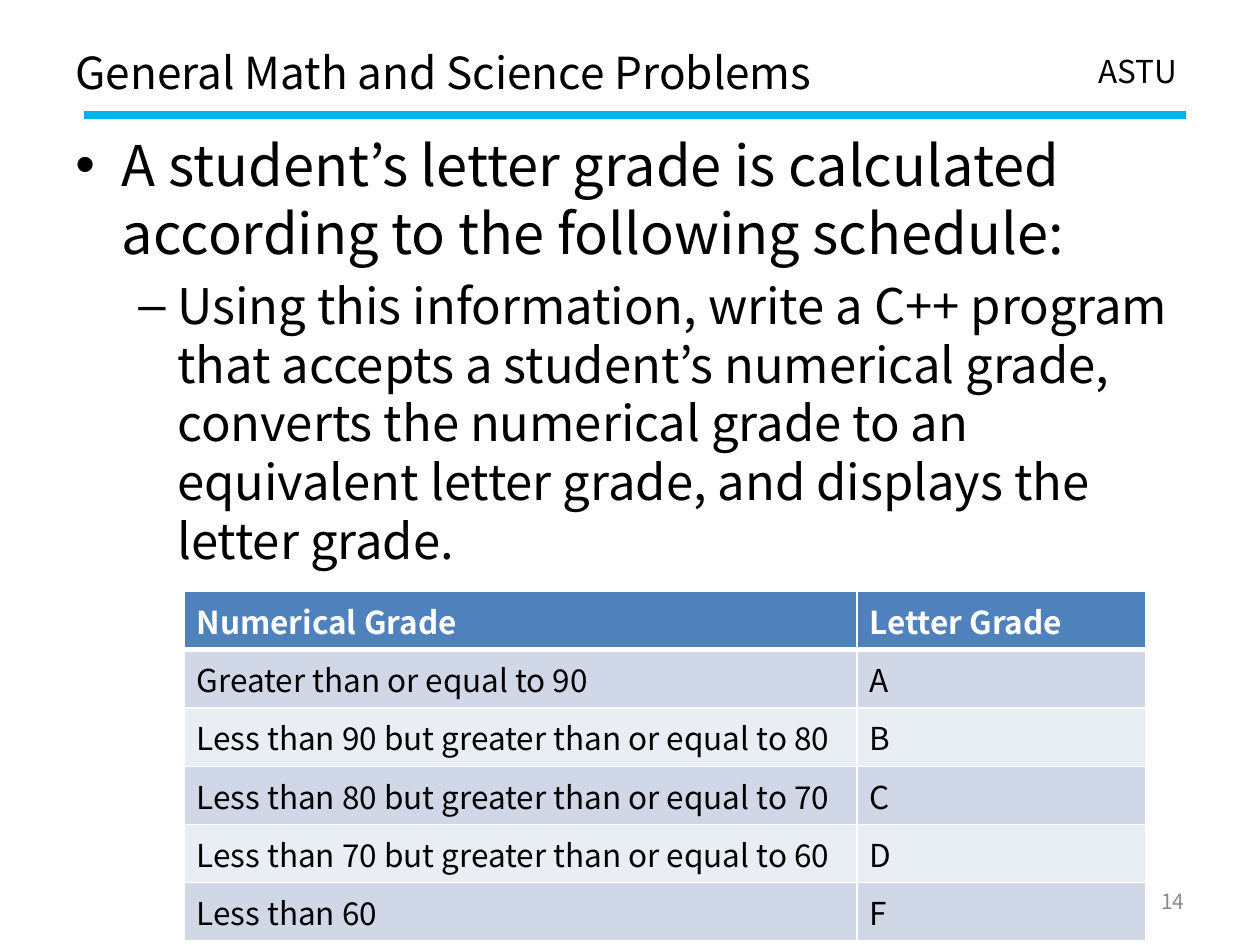
from dataclasses import dataclass
from lxml.etree import SubElement as Sub
from pptx import Presentation
from pptx.dml.color import RGBColor as Rgb
from pptx.enum.text import MSO_ANCHOR as Anchor, PP_ALIGN as Align
from pptx.oxml.ns import qn
from pptx.util import Emu, Inches, Pt


@dataclass(frozen=True)
class Theme:
    """Colours, type sizes and fonts of the slide."""
    font: str = "Noto Sans CJK KR"
    mark: str = "Arial"
    ink: str = "000000"
    white: str = "FFFFFF"
    rule: str = "00B0F0"
    grey: str = "8C8C8C"
    head: str = "4F81BD"
    bands: tuple = ("D0D8E8", "E9EDF4")
    title: float = 25.2
    lead: int = 32
    sub: int = 28
    text: int = 18
    note: int = 12


LOOK = Theme()
WIDE, HIGH = Inches(10), Inches(7.5)
GRADES = [
    ("Numerical Grade", "Letter Grade"),
    ("Greater than or equal to 90", "A"),
    ("Less than 90 but greater than or equal to 80", "B"),
    ("Less than 80 but greater than or equal to 70", "C"),
    ("Less than 70 but greater than or equal to 60", "D"),
    ("Less than 60", "F"),
]
POINTS = [
    ("•", 0, 0.37, 0.37, LOOK.lead,
     "A student’s letter grade is calculated according to the following schedule:"),
    ("–", 1, 0.81, 0.31, LOOK.sub,
     "Using this information, write a C++ program that accepts a student’s "
     "numerical grade, converts the numerical grade to an equivalent letter "
     "grade, and displays the letter grade."),
]


def place(x, y, w, h):
    """Turn shares of the slide's size into lengths."""
    return [Emu(round(n)) for n in (x * WIDE, y * HIGH, w * WIDE, h * HIGH)]


def write(par, text, size, tint=LOOK.ink, bold=False):
    """Add one styled run to a paragraph."""
    run = par.add_run()
    run.text = text
    font = run.font
    font.name, font.size, font.bold = LOOK.font, Pt(size), bold
    font.color.rgb = Rgb.from_string(tint)


def frame(slide, area, anchor=Anchor.TOP):
    """Add a wrapping text box and return its frame."""
    box = slide.shapes.add_textbox(*place(*area)).text_frame
    box.word_wrap, box.vertical_anchor = True, anchor
    return box


def label(slide, area, text, size, tint=LOOK.ink, align=Align.LEFT, anchor=Anchor.MIDDLE):
    """Add a single line of text."""
    par = frame(slide, area, anchor).paragraphs[0]
    par.alignment = align
    write(par, text, size, tint)


def rule(slide, left, right, y):
    """Draw the line under the title."""
    start, top, width, _ = place(left, y, right - left, 0)
    line = slide.shapes.add_connector(1, start, top, start + width, top)
    line.line.color.rgb, line.line.width = Rgb.from_string(LOOK.rule), Pt(4.5)
    Sub(line._element.spPr, qn("a:effectLst"))


def points(slide, area, items):
    """Add the bulleted text."""
    box = frame(slide, area)
    for i, (mark, level, left, hang, size, text) in enumerate(items):
        par = box.add_paragraph() if i else box.paragraphs[0]
        props = par._p.get_or_add_pPr()
        props.set("marL", str(Inches(left)))
        props.set("indent", str(-Inches(hang)))
        Sub(props, qn("a:buFont"), typeface=LOOK.mark)
        Sub(props, qn("a:buChar"), char=mark)
        par.level = level
        if i:
            par.space_before = Pt(0.2 * size)
        write(par, text, size)


def edge(cell, side, width):
    """Draw one white border of a cell."""
    line = Sub(cell._tc.get_or_add_tcPr(), qn("a:" + side), w=str(Pt(width)))
    Sub(Sub(line, qn("a:solidFill")), qn("a:srgbClr"), val=LOOK.white)


def grid(slide, area, rows, shares):
    """Add the banded table."""
    spot = place(*area)
    table = slide.shapes.add_table(len(rows), len(shares), *spot).table
    for col, share in zip(table.columns, shares):
        col.width = Emu(round(spot[2] * share))
    for r, row in enumerate(rows):
        fill = LOOK.bands[(r - 1) % 2] if r else LOOK.head
        for c, text in enumerate(row):
            cell = table.cell(r, c)
            for side in ("lnL", "lnR", "lnT", "lnB"):
                thick = (r, side) in ((0, "lnB"), (1, "lnT"))
                edge(cell, side, 3 if thick else 1)
            cell.fill.solid()
            cell.fill.fore_color.rgb = Rgb.from_string(fill)
            tint = LOOK.ink if r else LOOK.white
            write(cell.text_frame.paragraphs[0], text, LOOK.text, tint, not r)


def main():
    """Build and save the slide."""
    deck = Presentation()
    deck.slide_width, deck.slide_height = WIDE, HIGH
    slide = deck.slides.add_slide(deck.slide_layouts[6])
    rule(slide, 0.067, 0.941, 0.122)
    label(slide, (0.862, 0.049, 0.1, 0.053), "ASTU", LOOK.text, anchor=Anchor.TOP)
    label(slide, (0.05, 0.04, 0.8, 0.072), "General Math and Science Problems", LOOK.title)
    points(slide, (0.05, 0.132, 0.9, 0.76), POINTS)
    label(slide, (0.717, 0.927, 0.233, 0.053), "14", LOOK.note, LOOK.grey, Align.RIGHT)
    grid(slide, (0.146, 0.626, 0.763, 0.37), GRADES, (0.7, 0.3))
    deck.save("out.pptx")


if __name__ == "__main__":
    main()
